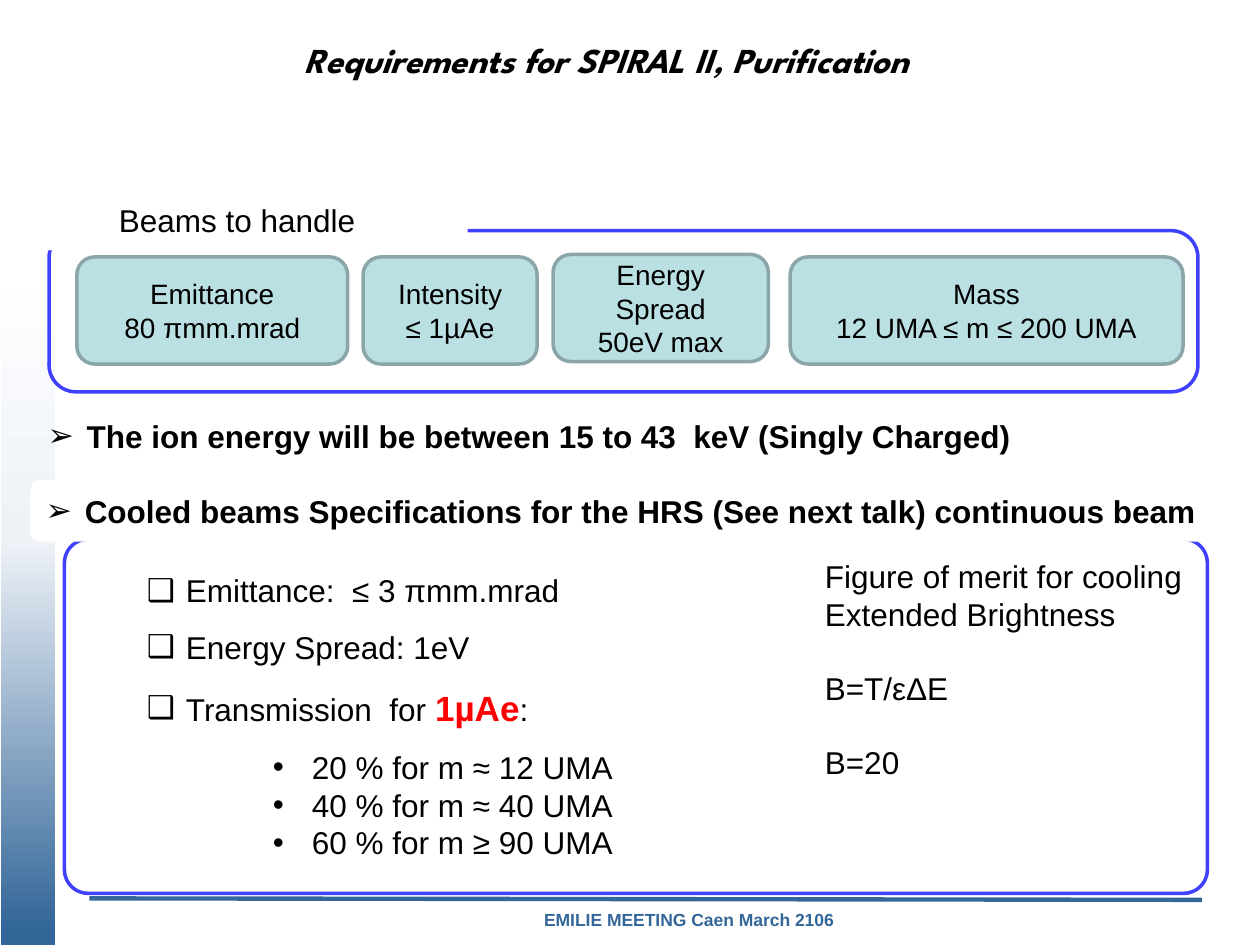
from copy import deepcopy

from lxml import etree
from pptx import Presentation
from pptx.dml.color import RGBColor
from pptx.enum.shapes import MSO_CONNECTOR, MSO_SHAPE
from pptx.enum.text import MSO_ANCHOR, PP_ALIGN
from pptx.oxml.ns import qn
from pptx.util import Cm, Pt

RECTANGLE, ROUNDED = MSO_SHAPE.RECTANGLE, MSO_SHAPE.ROUNDED_RECTANGLE
STRAIGHT = MSO_CONNECTOR.STRAIGHT
TOP, MIDDLE = MSO_ANCHOR.TOP, MSO_ANCHOR.MIDDLE
LEFT, CENTER, JUSTIFY = PP_ALIGN.LEFT, PP_ALIGN.CENTER, PP_ALIGN.JUSTIFY

BLUE, STEEL, TEAL, TEAL_EDGE = "4040FF", "336699", "BBE0E3", "8AA6A8"
BLACK, WHITE, RED = "000000", "FFFFFF", "FF0000"

TITLE = "Requirements for SPIRAL II, Purification"
FOOTER = " EMILIE MEETING Caen March 2106"
BAND_STOPS = [(0.20, WHITE), (0.53, "EEF2F7"), (0.98, STEEL)]

# left, top, width in cm, then the lines of text
BEAM_BOXES = [
    (1.55, 5.18, 5.46, ["Emittance", "80 πmm.mrad"]),
    (7.32, 5.18, 3.51, ["Intensity", "≤ 1µAe"]),
    (11.15, 5.13, 4.34, ["Energy Spread", "50eV max"]),
    (15.93, 5.18, 7.92, ["Mass", "12 UMA ≤ m ≤ 200 UMA"]),
]
BEAM_BOX_HEIGHT = 2.16

COOLED_HEADING = "Cooled beams Specifications for the HRS (See next talk) continuous beam"
ION_ENERGY = "The ion energy will be between 15 to 43  keV (Singly Charged)"

# bullet, left margin in cm, line spacing, text pieces
SPECIFICATIONS = [
    ("❑", 2.06, 1.0, ["Emittance:  ≤ 3 πmm.mrad"]),
    ("❑", 2.06, 1.5, ["Energy Spread: 1eV"]),
    ("❑", 2.06, 1.5, ["Transmission  for ", "1µAe", ":"]),
    ("•", 4.6, 1.5, ["20 % for m ≈ 12 UMA"]),
    ("•", 4.6, 1.0, ["40 % for m ≈ 40 UMA"]),
    ("•", 4.6, 1.0, ["60 % for m ≥ 90 UMA"]),
]
HIGHLIGHT = "1µAe"
# space before in points, text
MERIT = [(0, "Figure of merit for cooling"), (0, "Extended Brightness"),
         (20.7, "B=T/εΔΕ"), (20.7, "B=20")]


def color(hex_string):
    return RGBColor.from_string(hex_string)


def style(font, size, hex_string=BLACK, bold=False, name="Arial"):
    font.name, font.size, font.bold = name, Pt(size), bold
    font.color.rgb = color(hex_string)


def add_box(slide, box, fill=None, line=None, kind=ROUNDED):
    shape = slide.shapes.add_shape(kind, *map(Cm, box))
    shape.shadow.inherit = False
    if fill:
        shape.fill.solid()
        shape.fill.fore_color.rgb = color(fill)
    else:
        shape.fill.background()
    if line:
        shape.line.color.rgb = color(line)
        shape.line.width = Pt(2)
    else:
        shape.line.fill.background()
    shape.text_frame.vertical_anchor = MIDDLE
    return shape


def write_lines(shape, lines, size, align=CENTER, **font):
    shape.text_frame.text = "\n".join(lines)
    for paragraph in shape.text_frame.paragraphs:
        paragraph.alignment = align
        for run in paragraph.runs:
            style(run.font, size, **font)


def add_bullet(paragraph, character, margin):
    """Give the paragraph a hanging bullet with its text at margin cm."""
    properties = paragraph._p.get_or_add_pPr()
    properties.set("marL", str(Cm(margin)))
    properties.set("indent", str(-Cm(0.79)))
    etree.SubElement(properties, qn("a:buFont")).set("typeface", "Arial")
    etree.SubElement(properties, qn("a:buChar")).set("char", character)


def add_background(slide):
    band = add_box(slide, (0.03, 1.78, 1.09, 17.27), kind=RECTANGLE)
    band.fill.gradient()
    band.fill.gradient_angle = 270
    stop_list = band._element.spPr.find(".//" + qn("a:gsLst"))
    stop_list.append(deepcopy(stop_list[0]))
    for stop, (position, hex_string) in zip(band.fill.gradient_stops, BAND_STOPS):
        stop.position = position
        stop.color.rgb = color(hex_string)

    rule = slide.shapes.add_connector(STRAIGHT, Cm(1.8), Cm(18.11), Cm(24.23), Cm(18.14))
    rule.line.color.rgb = color(STEEL)
    rule.line.width = Pt(2.5)
    etree.SubElement(rule._element.spPr, qn("a:effectLst"))

    footer = slide.shapes.add_textbox(Cm(8.86), Cm(18.19), Cm(9.96), Cm(0.69))
    footer.text_frame.word_wrap = True
    write_lines(footer, [FOOTER], 10, hex_string=STEEL, bold=True)


def add_title(slide):
    title = slide.shapes.title
    title.left, title.top, title.width, title.height = map(Cm, (4.19, 0.64, 16.1, 1.12))
    title.text_frame.vertical_anchor = TOP
    write_lines(title, [TITLE], 20, bold=True, name="League Spartan")
    title.text_frame.paragraphs[0].runs[0].font.italic = True


def add_beams(slide):
    add_box(slide, (0.99, 4.65, 23.16, 3.25), line=BLUE)
    label = add_box(slide, (0.13, 3.81, 9.3, 1.24), fill=WHITE)
    write_lines(label, ["Beams to handle"], 18)
    for left, top, width, lines in BEAM_BOXES:
        box = add_box(slide, (left, top, width, BEAM_BOX_HEIGHT), TEAL, TEAL_EDGE)
        write_lines(box, lines, 16)


def add_specifications(slide):
    frame = add_box(slide, (1.3, 10.87, 23.04, 7.14), line=BLUE)
    frame.adjustments[0] = 0.067
    text_frame = frame.text_frame
    for index, (bullet, margin, spacing, pieces) in enumerate(SPECIFICATIONS):
        paragraph = text_frame.add_paragraph() if index else text_frame.paragraphs[0]
        paragraph.alignment = LEFT
        paragraph.line_spacing = spacing
        add_bullet(paragraph, bullet, margin)
        paragraph.font.size = Pt(18)
        for piece in pieces:
            run = paragraph.add_run()
            run.text = piece
            if piece == HIGHLIGHT:
                style(run.font, 20, RED, bold=True)
            else:
                style(run.font, 18)


def add_statement(slide, text, top, height, align, fill=None):
    box = add_box(slide, (0.61, top, 24.13, height), fill=fill)
    write_lines(box, [text], 18, align, bold=True)
    add_bullet(box.text_frame.paragraphs[0], "➢", 0.79)


def add_merit(slide):
    box = slide.shapes.add_textbox(Cm(16.38), Cm(11.1), Cm(7.77), Cm(4.88))
    box.text_frame.word_wrap = False
    write_lines(box, [text for _, text in MERIT], 18, LEFT)
    for paragraph, (space, _) in zip(box.text_frame.paragraphs, MERIT):
        paragraph.space_before = Pt(space)


def main():
    presentation = Presentation()
    presentation.slide_width, presentation.slide_height = Cm(25.4), Cm(19.05)
    slide = presentation.slides.add_slide(presentation.slide_layouts[5])
    add_background(slide)
    add_title(slide)
    add_beams(slide)
    add_specifications(slide)
    add_statement(slide, COOLED_HEADING, 9.68, 1.24, LEFT, WHITE)
    add_statement(slide, ION_ENERGY, 7.77, 2.03, JUSTIFY)
    add_merit(slide)
    presentation.save("out.pptx")


if __name__ == "__main__":
    main()
